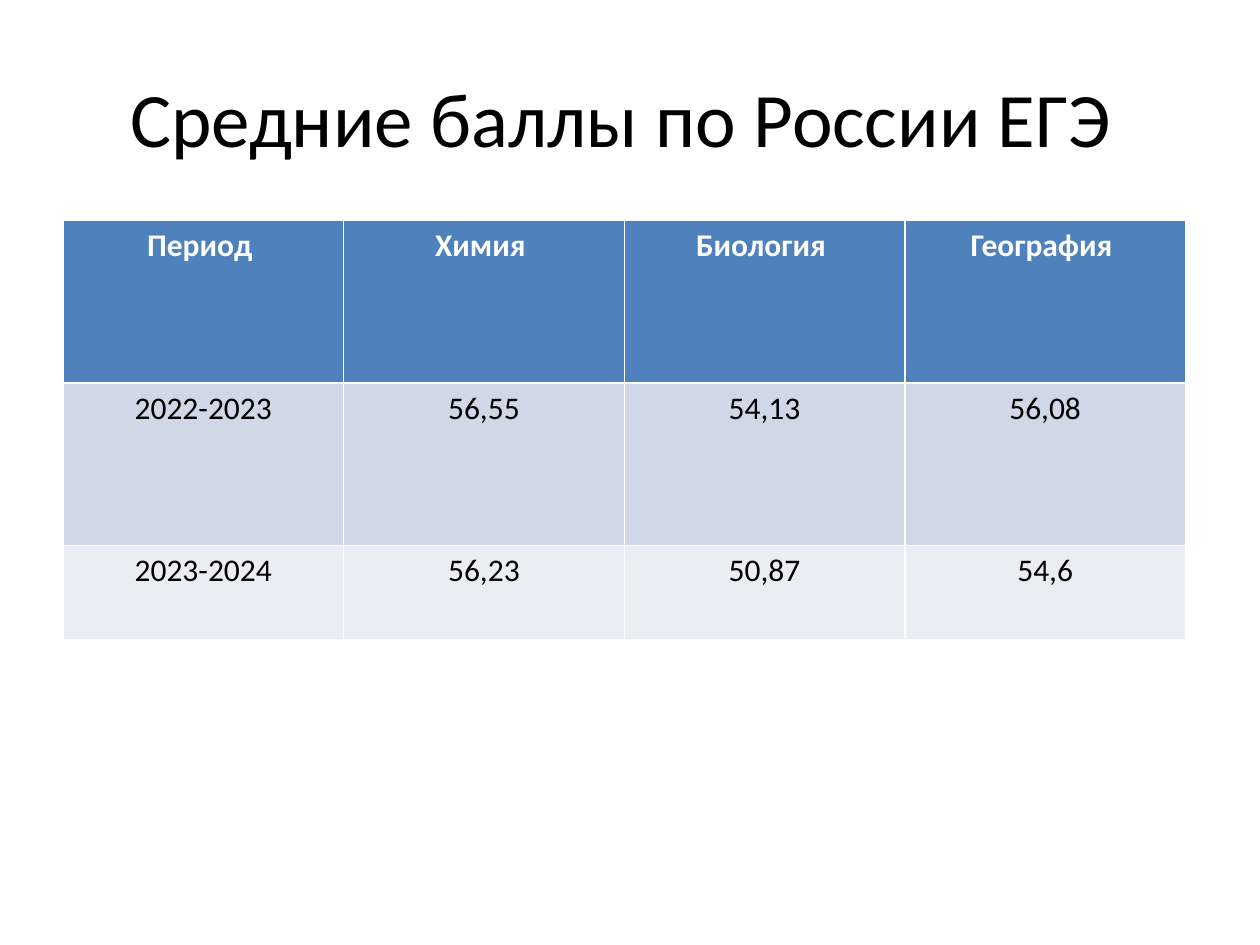
from pptx import Presentation
from pptx.dml.color import RGBColor
from pptx.enum.text import MSO_ANCHOR, PP_ALIGN
from pptx.util import Inches, Pt

CENTER = PP_ALIGN.CENTER
MIDDLE = MSO_ANCHOR.MIDDLE


def color(value):
    return RGBColor.from_string(value)


def write(frame, text, size=18, ink="000000", bold=False):
    para = frame.paragraphs[0]
    para.alignment = CENTER
    span = para.add_run()
    span.text = text
    span.font.name = "Calibri"
    span.font.size = Pt(size)
    span.font.bold = bold
    span.font.color.rgb = color(ink)


deck = Presentation()
deck.slide_width = Inches(10)
deck.slide_height = Inches(7.5)
page = deck.slides.add_slide(deck.slide_layouts[6])
margin = deck.slide_width // 20

title = page.shapes.add_textbox(
    margin, int(deck.slide_height * 0.04), deck.slide_width - 2 * margin, deck.slide_height // 6
)
title.text_frame.word_wrap = True
title.text_frame.vertical_anchor = MIDDLE
write(title.text_frame, "Средние баллы по России ЕГЭ ", size=44)

scores = [
    ["Период ", "Химия ", "Биология ", "География "],
    ["2022-2023", "56,55", "54,13", "56,08"],
    ["2023-2024", "56,23", "50,87", "54,6"],
]
row_heights = [1.29, 1.29, 0.75]
row_fills = ["4F81BD", "D0D8E8", "E9EDF4"]
table = page.shapes.add_table(
    len(scores), len(scores[0]), margin, Inches(1.75), Inches(8.91), Inches(sum(row_heights))
).table

for row, (values, height, fill) in enumerate(zip(scores, row_heights, row_fills)):
    table.rows[row].height = Inches(height)
    header = row == 0
    for column, value in enumerate(values):
        cell = table.cell(row, column)
        cell.fill.solid()
        cell.fill.fore_color.rgb = color(fill)
        write(cell.text_frame, value, ink="FFFFFF" if header else "000000", bold=header)

deck.save("out.pptx")
